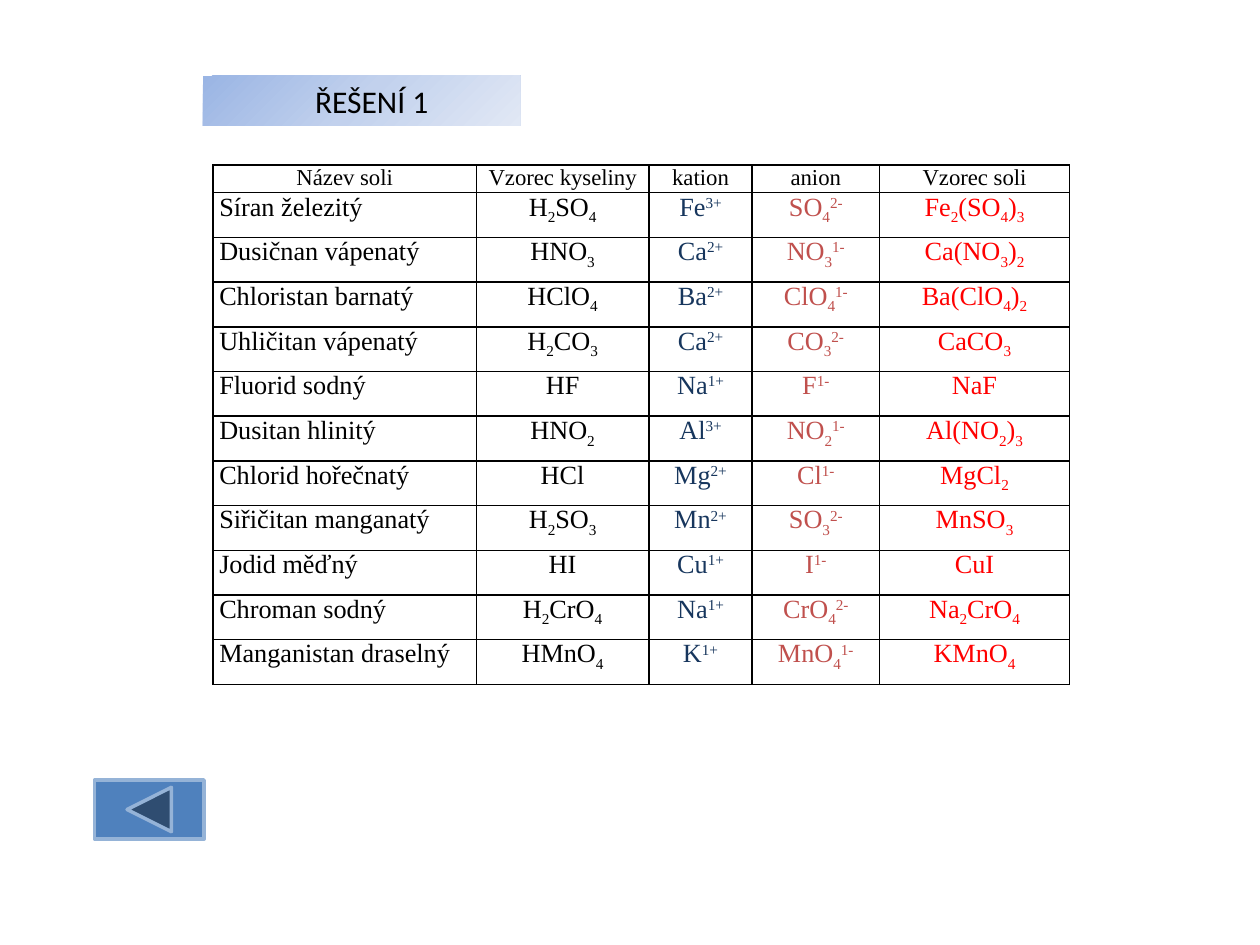
from copy import deepcopy
from itertools import groupby

from lxml.etree import SubElement
from pptx import Presentation
from pptx.dml.color import RGBColor
from pptx.enum.shapes import MSO_SHAPE
from pptx.enum.text import MSO_ANCHOR, MSO_AUTO_SIZE, PP_ALIGN
from pptx.oxml.ns import qn
from pptx.util import Inches, Pt

# Content: digits in a formula are subscripts, the charge follows "^"
TITLE = "ŘEŠENÍ 1"
HEADERS = ["Název soli", "Vzorec kyseliny", "kation", "anion", "Vzorec soli"]
SALTS = [
    ("Síran železitý", "H2SO4", "Fe^3+", "SO4^2-", "Fe2(SO4)3"),
    ("Dusičnan vápenatý", "HNO3", "Ca^2+", "NO3^1-", "Ca(NO3)2"),
    ("Chloristan barnatý", "HClO4", "Ba^2+", "ClO4^1-", "Ba(ClO4)2"),
    ("Uhličitan vápenatý", "H2CO3", "Ca^2+", "CO3^2-", "CaCO3"),
    ("Fluorid sodný", "HF", "Na^1+", "F^1-", "NaF"),
    ("Dusitan hlinitý", "HNO2", "Al^3+", "NO2^1-", "Al(NO2)3"),
    ("Chlorid hořečnatý", "HCl", "Mg^2+", "Cl^1-", "MgCl2"),
    ("Siřičitan manganatý", "H2SO3", "Mn^2+", "SO3^2-", "MnSO3"),
    ("Jodid měďný", "HI", "Cu^1+", "I^1-", "CuI"),
    ("Chroman sodný", "H2CrO4", "Na^1+", "CrO4^2-", "Na2CrO4"),
    ("Manganistan draselný", "HMnO4", "K^1+", "MnO4^1-", "KMnO4"),
]

THEME = {
    "title_font": "Calibri", "table_font": "Times New Roman",
    "title_size": 18, "header_size": 13, "body_size": 15,
    "text": "000000", "border": "000000",
    "columns": ["000000", "000000", "17365D", "C0504D", "FF0000"],
    "gradient": [(0, "9AB5E4"), (0.5, "C2D1ED"), (1, "E1E8F5")],
    "button": "4F81BD", "button_line": "95B3D7",
}
SUBSCRIPT, SUPERSCRIPT = -25, 30
COLUMN_WIDTHS = [2.09, 1.37, 0.82, 1.01, 1.51]
HEADER_HEIGHT, ROW_HEIGHT = 0.22, 0.355


def box(left, top, width, height):
    return [Inches(value) for value in (left, top, width, height)]


def add_run(paragraph, text, font, size, color, baseline=0):
    run = paragraph.add_run()
    run.text = text
    run.font.name = font
    run.font.size = Pt(size)
    run.font.color.rgb = RGBColor.from_string(color)
    if baseline:
        run.font._element.set("baseline", str(baseline * 1000))


def formula_parts(formula):
    base, _, charge = formula.partition("^")
    for is_digit, letters in groupby(base, str.isdigit):
        yield "".join(letters), SUBSCRIPT if is_digit else 0
    if charge:
        yield charge, SUPERSCRIPT


def add_borders(cell, color):
    properties = cell._tc.get_or_add_tcPr()
    for index, side in enumerate(("lnL", "lnR", "lnT", "lnB")):
        line = SubElement(properties, qn(f"a:{side}"), w=str(Pt(1)))
        fill = SubElement(line, qn("a:solidFill"))
        SubElement(fill, qn("a:srgbClr"), val=color)
        properties.insert(index, line)


def fill_cell(cell, parts, size, color, alignment):
    cell.margin_left = cell.margin_right = Inches(0.05)
    cell.margin_top = cell.margin_bottom = 0
    cell.vertical_anchor = MSO_ANCHOR.TOP
    cell.fill.background()
    add_borders(cell, THEME["border"])
    paragraph = cell.text_frame.paragraphs[0]
    paragraph.alignment = alignment
    for text, baseline in parts:
        add_run(paragraph, text, THEME["table_font"], size, color, baseline)


def add_title(slide):
    title = slide.shapes.title
    title.left, title.top, title.width, title.height = box(1.61, 0.6, 2.52, 0.4)
    title.fill.gradient()
    title.fill.gradient_angle = 315
    stop_list = title._element.spPr.find(".//" + qn("a:gsLst"))
    stop_list.insert(1, deepcopy(stop_list[0]))
    for stop, (position, color) in zip(title.fill.gradient_stops, THEME["gradient"]):
        stop.position = position
        stop.color.rgb = RGBColor.from_string(color)
    frame = title.text_frame
    frame.auto_size = MSO_AUTO_SIZE.NONE
    frame.vertical_anchor = MSO_ANCHOR.MIDDLE
    frame.margin_left = Inches(0.89)
    paragraph = frame.paragraphs[0]
    paragraph.alignment = PP_ALIGN.LEFT
    add_run(paragraph, TITLE, THEME["title_font"], THEME["title_size"], THEME["text"])


def add_salt_table(slide):
    height = HEADER_HEIGHT + ROW_HEIGHT * len(SALTS)
    table = slide.shapes.add_table(
        len(SALTS) + 1, len(HEADERS), *box(1.69, 1.31, sum(COLUMN_WIDTHS), height)
    ).table
    table.first_row = table.horz_banding = False
    for column, width in zip(table.columns, COLUMN_WIDTHS):
        column.width = Inches(width)
    for index, row in enumerate(table.rows):
        row.height = Inches(ROW_HEIGHT if index else HEADER_HEIGHT)

    for column, header in enumerate(HEADERS):
        fill_cell(table.cell(0, column), [(header, 0)], THEME["header_size"],
                  THEME["text"], PP_ALIGN.CENTER)
    for row, salt in enumerate(SALTS, start=1):
        for column, (text, color) in enumerate(zip(salt, THEME["columns"])):
            alignment = PP_ALIGN.CENTER if column else PP_ALIGN.LEFT
            fill_cell(table.cell(row, column), formula_parts(text),
                      THEME["body_size"], color, alignment)


def add_back_button(slide):
    button = slide.shapes.add_shape(
        MSO_SHAPE.ACTION_BUTTON_BACK_OR_PREVIOUS, *box(0.75, 6.19, 0.87, 0.47))
    button.shadow.inherit = False
    button.fill.solid()
    button.fill.fore_color.rgb = RGBColor.from_string(THEME["button"])
    button.line.color.rgb = RGBColor.from_string(THEME["button_line"])
    button.line.width = Pt(2)


def main():
    presentation = Presentation()
    presentation.slide_width, presentation.slide_height = Inches(10), Inches(7.5)
    slide = presentation.slides.add_slide(presentation.slide_layouts[5])
    add_title(slide)
    add_salt_table(slide)
    add_back_button(slide)
    presentation.save("out.pptx")


if __name__ == "__main__":
    main()
